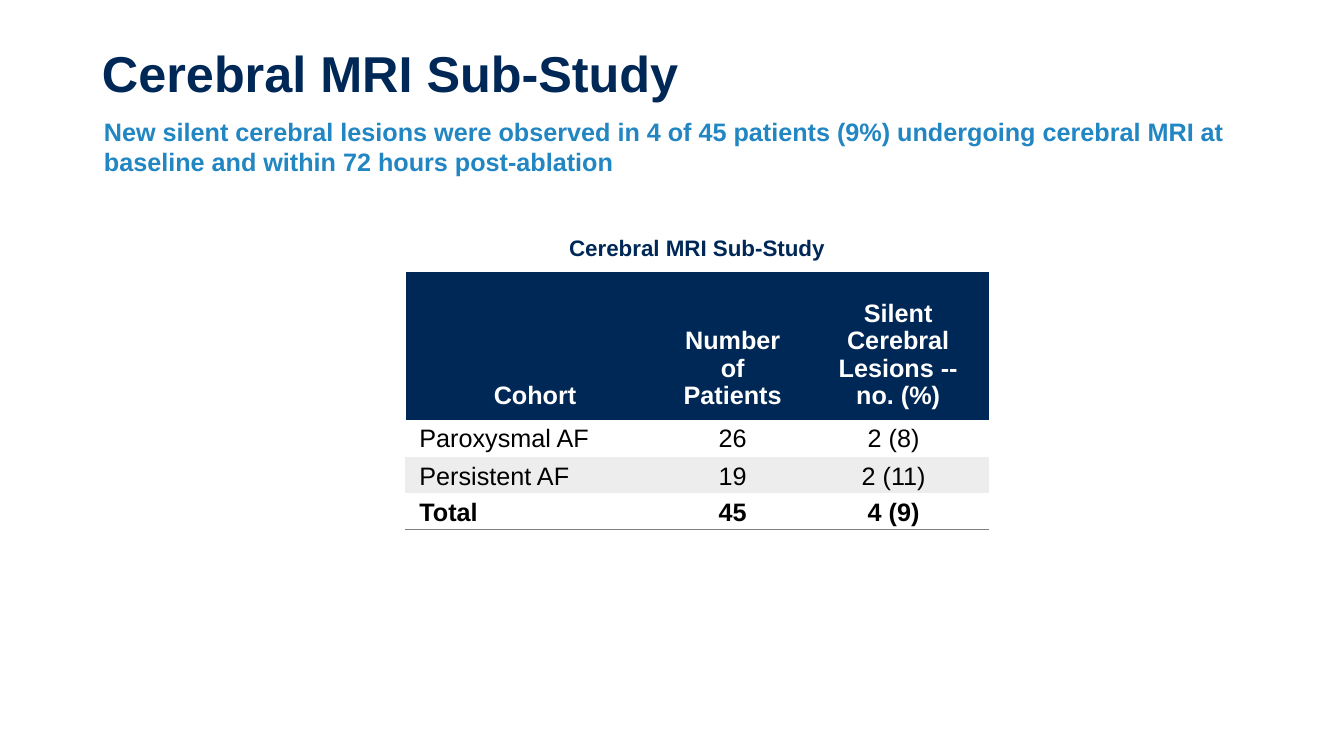
import pptx
import pptx.dml.color
import pptx.enum.text
import pptx.oxml
import pptx.util
from pptx.dml.color import RGBColor
from pptx.util import Cm

NAVY = RGBColor(0x00, 0x28, 0x56)
BLUE = RGBColor(0x21, 0x86, 0xC2)
WHITE = RGBColor(0xFF, 0xFF, 0xFF)
BLACK = RGBColor(0x00, 0x00, 0x00)
BAND = RGBColor(0xED, 0xED, 0xED)
RULE = RGBColor(0x7F, 0x7F, 0x7F)

ALIGN = pptx.enum.text.PP_ALIGN
ANCHOR = pptx.enum.text.MSO_ANCHOR
DRAWING = "http://schemas.openxmlformats.org/drawingml/2006/main"
PLAIN_TABLE = "{2D5ABB26-0587-4C30-8999-92F81FD0307C}"

TABLE_LEFT, TABLE_TOP = Cm(10.21), Cm(6.83)
COLUMN_WIDTHS = [Cm(5.84), Cm(4.37), Cm(4.5)]
ROW_HEIGHTS = [Cm(3.75), Cm(0.94), Cm(0.91), Cm(0.91)]
ROWS = [
    ["Cohort", "Number of Patients", "Silent Cerebral Lesions -- no. (%)"],
    ["Paroxysmal AF", "26", "2 (8)"],
    ["Persistent AF", "19", "2 (11)"],
    ["Total", "45", "4 (9)"],
]
# Left and right cell margins of each column
HEADER_MARGINS = [(0.71, 0), (0.97, 0.51), (0.64, 0.71)]
BODY_MARGINS = [(0.36, 0), (0.46, 0), (0, 0.3)]


def apply(target, values):
    for name, value in values.items():
        setattr(target, name, value)


class StudySlide:
    """Holds the text style and the slide being filled."""

    font_name = "Arial"

    def __init__(self, slide):
        self.slide = slide

    def set_text(self, frame, text, size, color, bold=True, **paragraph_format):
        frame.word_wrap = True
        paragraph = frame.paragraphs[0]
        paragraph.text = text
        apply(paragraph, paragraph_format)
        apply(paragraph.font, {"name": self.font_name, "bold": bold,
                               "size": pptx.util.Pt(size)})
        paragraph.font.color.rgb = color

    def fill_frame(self, shape, text, size, color, **paragraph_format):
        frame = shape.text_frame
        apply(frame, {"margin_left": 0, "margin_right": 0, "margin_top": 0,
                      "margin_bottom": 0, "vertical_anchor": ANCHOR.TOP,
                      "auto_size": pptx.enum.text.MSO_AUTO_SIZE.NONE})
        self.set_text(frame, text, size, color, **paragraph_format)

    def title(self, text, left, top, width, height):
        shape = self.slide.shapes.title
        apply(shape, {"left": left, "top": top, "width": width, "height": height})
        self.fill_frame(shape, text, 36, NAVY, alignment=ALIGN.LEFT)

    def text(self, text, left, top, width, height, size, color, **paragraph_format):
        shape = self.slide.shapes.add_textbox(left, top, width, height)
        self.fill_frame(shape, text, size, color, **paragraph_format)

    def border(self, cell, side, color, width):
        properties = cell._tc.get_or_add_tcPr()
        line = pptx.oxml.parse_xml(
            f'<a:ln{side} xmlns:a="{DRAWING}" w="{pptx.util.Pt(width)}"><a:solidFill>'
            f'<a:srgbClr val="{color}"/></a:solidFill></a:ln{side}>')
        properties.insert(0, line)

    def table(self, rows, left, top, widths, heights):
        frame = self.slide.shapes.add_table(
            len(rows), len(widths), left, top, sum(widths), sum(heights))
        table = frame.table
        apply(table, {"first_row": False, "horz_banding": False})
        table._tbl.tblPr.find(f"{{{DRAWING}}}tableStyleId").text = PLAIN_TABLE
        for column, width in zip(table.columns, widths):
            column.width = width
        for row, height in zip(table.rows, heights):
            row.height = height
        for row_index, texts in enumerate(rows):
            for column_index, text in enumerate(texts):
                cell = table.cell(row_index, column_index)
                if row_index == 0:
                    self.header_cell(cell, text, column_index)
                else:
                    self.body_cell(cell, text, row_index, column_index,
                                   is_total=row_index == len(rows) - 1)

    def header_cell(self, cell, text, column_index):
        before, after = HEADER_MARGINS[column_index]
        apply(cell, {"margin_left": Cm(before), "margin_right": Cm(after),
                     "margin_top": 0, "margin_bottom": Cm(0.25),
                     "vertical_anchor": ANCHOR.BOTTOM})
        self.set_text(cell.text_frame, text, 18, WHITE,
                      alignment=ALIGN.CENTER, line_spacing=0.97)
        cell.fill.solid()
        cell.fill.fore_color.rgb = NAVY
        self.border(cell, "T", WHITE, 1)
        if column_index == 0:
            self.border(cell, "L", WHITE, 1)

    def body_cell(self, cell, text, row_index, column_index, is_total):
        before, after = BODY_MARGINS[column_index]
        apply(cell, {"margin_left": Cm(before), "margin_right": Cm(after),
                     "margin_top": Cm(0.13), "margin_bottom": 0,
                     "vertical_anchor": ANCHOR.TOP})
        self.set_text(cell.text_frame, text, 18, BLACK, bold=is_total,
                      alignment=ALIGN.CENTER if column_index else ALIGN.LEFT)
        if row_index % 2 == 0:
            cell.fill.solid()
            cell.fill.fore_color.rgb = BAND
        else:
            cell.fill.background()
        if is_total:
            self.border(cell, "B", RULE, 0.75)


def main():
    presentation = pptx.Presentation()
    apply(presentation, {"slide_width": Cm(33.87), "slide_height": Cm(19.05)})
    title_only = presentation.slide_layouts[5]
    study = StudySlide(presentation.slides.add_slide(title_only))

    # Heading and key finding
    study.title("Cerebral MRI Sub-Study", Cm(2.57), Cm(1.07), Cm(24.77), Cm(1.5))
    study.text("New silent cerebral lesions were observed in 4 of 45 patients (9%) "
               "undergoing cerebral MRI at baseline and within 72 hours post-ablation",
               Cm(2.62), Cm(2.95), Cm(28.7), Cm(1.5), 18, BLUE,
               line_spacing=pptx.util.Pt(21.1))

    # Caption and table
    study.text("Cerebral MRI Sub-Study", TABLE_LEFT, Cm(5.89), sum(COLUMN_WIDTHS),
               Cm(0.65), 16, NAVY, alignment=ALIGN.CENTER)
    study.table(ROWS, TABLE_LEFT, TABLE_TOP, COLUMN_WIDTHS, ROW_HEIGHTS)

    presentation.save("out.pptx")


if __name__ == "__main__":
    main()
